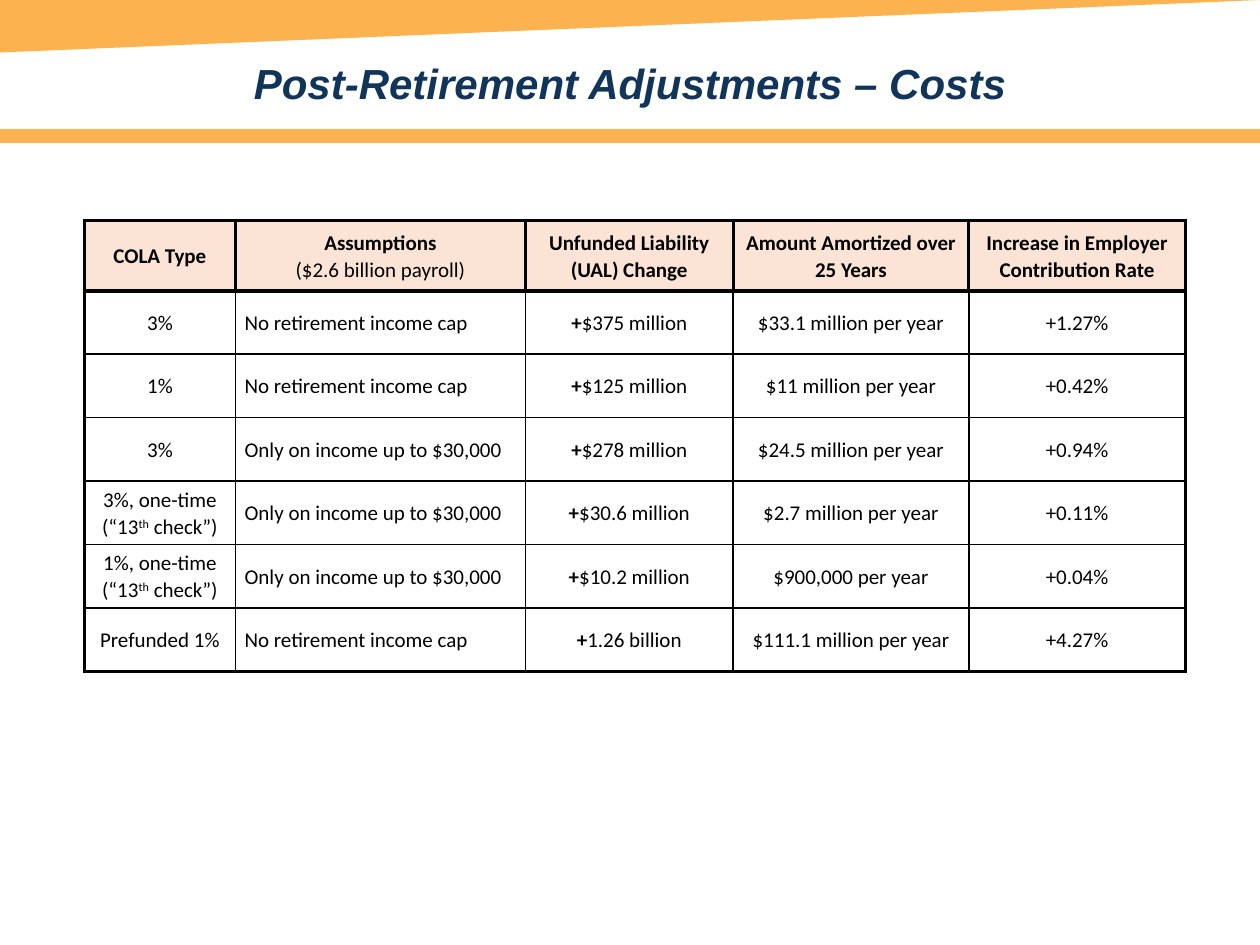
from pptx import Presentation
from pptx.dml.color import RGBColor
from pptx.enum import shapes, text
from pptx.oxml import parse_xml
from pptx.oxml.ns import nsdecls
from pptx.util import Pt

ORANGE, NAVY, BLACK, PEACH = "FCB24E", "11345A", "000000", "FBE4D5"
THICK, THIN = 2.25, 1
COLUMN_WIDTHS = [86.4, 165.6, 118.8, 134.6, 123.8]
HEADER_HEIGHT, ROW_HEIGHT = 40.2, 36.25

PLAIN, BOLD, RAISED = {}, {"bold": True}, {"raised": True}
CHECK = [("(“13", PLAIN), ("th", RAISED), (" check”)", PLAIN)]
NO_CAP, CAPPED = "No retirement income cap", "Only on income up to $30,000"

HEADERS = [
    ["COLA Type"],
    ["Assumptions", [("($2.6 billion payroll)", {"bold": False})]],
    ["Unfunded Liability (UAL) Change"],
    ["Amount Amortized over 25 Years"],
    ["Increase in Employer Contribution Rate"],
]
COSTS = [
    (["3%"], NO_CAP, "$375 million", "$33.1 million per year", "+1.27%"),
    (["1%"], NO_CAP, "$125 million", "$11 million per year", "+0.42%"),
    (["3%"], CAPPED, "$278 million", "$24.5 million per year", "+0.94%"),
    (["3%, one-time", CHECK], CAPPED, "$30.6 million", "$2.7 million per year", "+0.11%"),
    (["1%, one-time", CHECK], CAPPED, "$10.2 million", "$900,000 per year", "+0.04%"),
    (["Prefunded 1%"], NO_CAP, "1.26 billion", "$111.1 million per year", "+4.27%"),
]


def color(value):
    """Turn a hex string into a colour."""
    return RGBColor.from_string(value)


def write_text(frame, paragraphs, *, size, font, fill, bold=False, italic=False,
               align=text.PP_ALIGN.CENTER, spacing=1.07):
    """Write paragraphs, each a string or a list of (text, format) runs."""
    frame.word_wrap = True
    for index, content in enumerate(paragraphs):
        paragraph = frame.add_paragraph() if index else frame.paragraphs[0]
        paragraph.alignment = align
        paragraph.line_spacing = spacing
        runs = [(content, PLAIN)] if isinstance(content, str) else content
        for words, options in runs:
            run = paragraph.add_run()
            run.text = words
            run.font.size, run.font.name = Pt(size), font
            run.font.bold, run.font.italic = options.get("bold", bold), italic
            run.font.color.rgb = color(fill)
            if options.get("raised"):
                run.font._element.set("baseline", "30000")


def set_borders(cell, widths):
    """Draw the left, right, top and bottom borders of a cell."""
    properties = cell._tc.get_or_add_tcPr()
    for side, width in zip("LRTB", widths):
        properties.append(parse_xml(
            f'<a:ln{side} {nsdecls("a")} w="{Pt(width)}"><a:solidFill>'
            f'<a:srgbClr val="{BLACK}"/></a:solidFill></a:ln{side}>'))


def add_banner(slide, left, top, width):
    """Place the wedge, the title and the rule below it."""
    rule = slide.shapes.add_connector(
        shapes.MSO_CONNECTOR.STRAIGHT,
        Pt(left + width), Pt(top + 77.8), Pt(left), Pt(top + 77.8))
    rule.line.color.rgb = color(ORANGE)
    rule.line.width = Pt(8)
    rule._element.spPr.append(parse_xml(f'<a:effectLst {nsdecls("a")}/>'))

    wedge = slide.shapes.add_shape(
        shapes.MSO_SHAPE.RIGHT_TRIANGLE, Pt(left), Pt(top), Pt(width), Pt(30))
    wedge.shadow.inherit = False
    wedge.fill.solid()
    wedge.fill.fore_color.rgb = color(ORANGE)
    wedge.line.fill.background()
    wedge.rotation = 180
    wedge._element.spPr.xfrm.set("flipH", "1")

    title = slide.shapes.add_textbox(Pt(left), Pt(top + 20.9), Pt(width), Pt(38.9))
    title.text_frame.margin_top = Pt(6.5)
    write_text(title.text_frame, ["Post-Retirement Adjustments – Costs"],
               size=24, font="Arial", fill=NAVY, bold=True, italic=True, spacing=1.2)


def add_cost_table(slide, left, top):
    """Place the table of adjustment costs."""
    rows = [HEADERS] + [
        [kind, [assumption], [[("+", BOLD), (liability, PLAIN)]], [amount], [rate]]
        for kind, assumption, liability, amount, rate in COSTS]
    last_row, last_column = len(rows) - 1, len(COLUMN_WIDTHS) - 1
    heights = [HEADER_HEIGHT] + [ROW_HEIGHT] * last_row
    table = slide.shapes.add_table(
        len(rows), len(COLUMN_WIDTHS), Pt(left), Pt(top),
        Pt(sum(COLUMN_WIDTHS)), Pt(sum(heights))).table
    table.horz_banding = False
    for column, width in zip(table.columns, COLUMN_WIDTHS):
        column.width = Pt(width)
    for row, height in zip(table.rows, heights):
        row.height = Pt(height)

    for r, row in enumerate(rows):
        for c, paragraphs in enumerate(row):
            cell, header = table.cell(r, c), r == 0
            cell.vertical_anchor = text.MSO_ANCHOR.MIDDLE
            cell.margin_left = cell.margin_right = Pt(5.2)
            cell.margin_top = cell.margin_bottom = 0
            thick_sides = (header or c == 0, header or c == last_column,
                           r <= 1, header or r == last_row)
            set_borders(cell, [THICK if thick else THIN for thick in thick_sides])
            if header:
                cell.fill.solid()
                cell.fill.fore_color.rgb = color(PEACH)
            else:
                cell.fill.background()
            left_aligned = c == 1 and not header
            write_text(cell.text_frame, paragraphs, size=12, font="Calibri",
                       fill=BLACK, bold=header,
                       align=text.PP_ALIGN.LEFT if left_aligned else text.PP_ALIGN.CENTER)


def main():
    """Build the slide and save it."""
    presentation = Presentation()
    presentation.slide_width, presentation.slide_height = Pt(720), Pt(540)
    slide = presentation.slides.add_slide(presentation.slide_layouts[6])
    add_banner(slide, 0, 0, 720)
    add_cost_table(slide, 48.2, 126)
    presentation.save("out.pptx")


if __name__ == "__main__":
    main()
